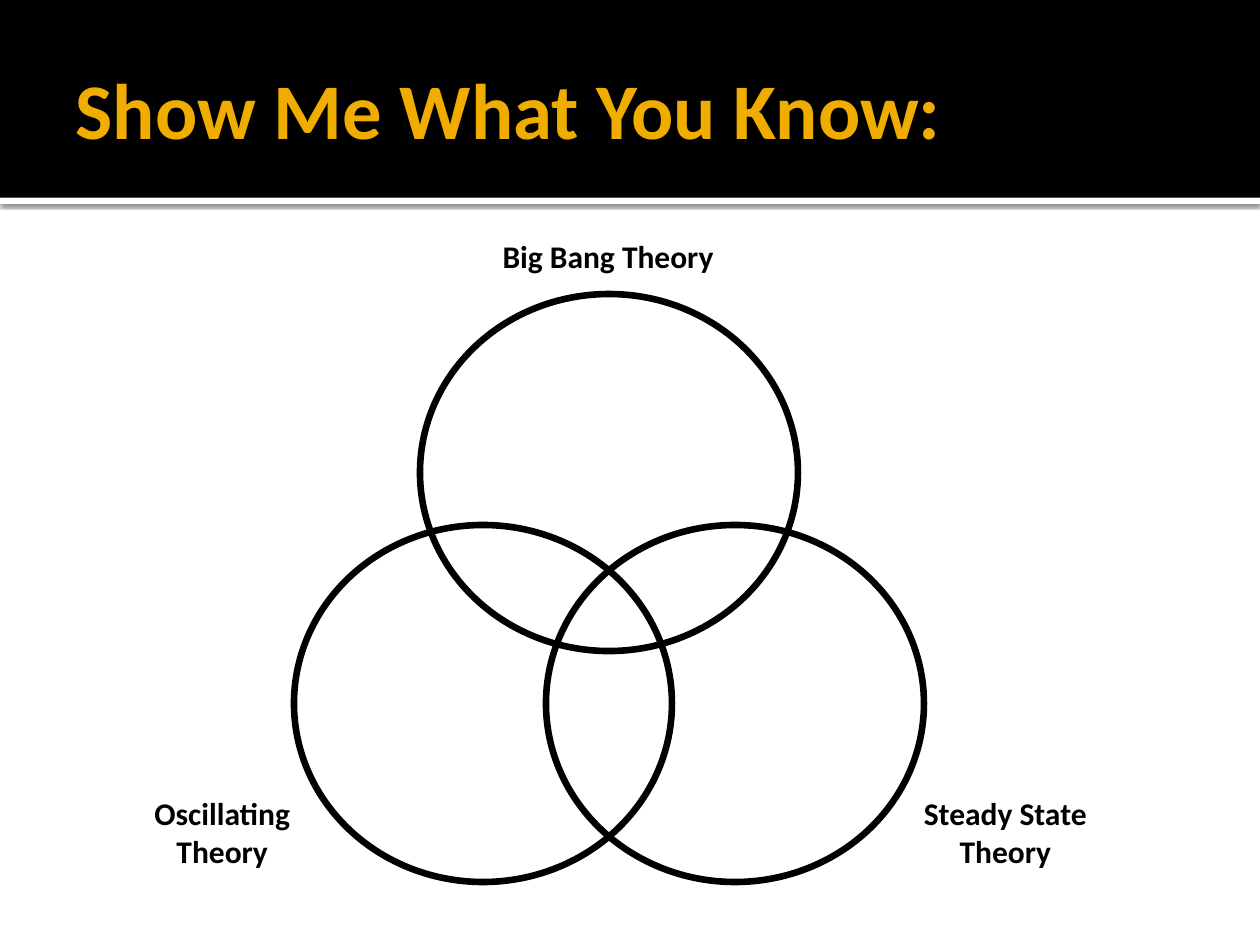
from dataclasses import dataclass

from lxml.etree import SubElement
from pptx import Presentation
from pptx.dml.color import RGBColor as Rgb
from pptx.enum.shapes import MSO_SHAPE as Kind
from pptx.enum.text import MSO_ANCHOR as Anchor, MSO_AUTO_SIZE as Fit, PP_ALIGN as Align
from pptx.oxml.ns import qn
from pptx.shapes.autoshape import Shape
from pptx.slide import Slide
from pptx.util import Pt


@dataclass(frozen=True)
class Theme:
    font: str = "Calibri"
    black: Rgb = Rgb(0, 0, 0)
    white: Rgb = Rgb(255, 255, 255)
    gold: Rgb = Rgb(0xF0, 0xAD, 0)
    head: float = 45
    label: float = 18
    ring: float = 3.78


@dataclass(frozen=True)
class Box:
    left: float
    top: float
    width: float
    height: float

    def place(self) -> tuple[Pt, Pt, Pt, Pt]:
        return Pt(self.left), Pt(self.top), Pt(self.width), Pt(self.height)


@dataclass(frozen=True)
class Theory:
    lines: tuple[str, ...]
    ring: Box
    label: Box


THEME = Theme()
WIDE, HIGH = 720, 540
BAND = 113
RING_W, RING_H = 216, 204
MID, SHIFT = 348, 72
UPPER, LOWER = 168, 300


def ring_box(center: float, top: float) -> Box:
    return Box(center - RING_W / 2, top, RING_W, RING_H)


THEORIES = (
    Theory(("Big Bang Theory",), ring_box(MID, UPPER), Box(276, 132, 143, 29)),
    Theory(("Steady State", "Theory"), ring_box(MID + SHIFT, LOWER), Box(516, 450, 117, 51)),
    Theory(("Oscillating", "Theory"), ring_box(MID - SHIFT, LOWER), Box(78, 450, 98, 51)),
)


def add_band(slide: Slide, box: Box, color: Rgb) -> Shape:
    band = slide.shapes.add_shape(Kind.RECTANGLE, *box.place())
    band.shadow.inherit = False
    band.fill.solid()
    band.fill.fore_color.rgb = color
    band.line.fill.background()
    return band


def cast_shadow(shape: Shape) -> None:
    """Add a soft shadow straight below the shape."""
    effects = shape.element.spPr.find(qn("a:effectLst"))
    outer = SubElement(effects, qn("a:outerShdw"), blurRad=str(Pt(2.5)),
                       dist=str(Pt(0.8)), dir="5400000", algn="tl", rotWithShape="0")
    color = SubElement(outer, qn("a:srgbClr"), val=str(THEME.black))
    SubElement(color, qn("a:alpha"), val="60000")


def style(para, size: float, color: Rgb, align: Align) -> None:
    para.alignment = align
    font = para.font
    font.name, font.size, font.bold = THEME.font, Pt(size), True
    font.color.rgb = color


def set_title(slide: Slide, text: str) -> None:
    title = slide.shapes.title
    title.left, title.top, title.width, title.height = Box(36, 12, 648, 99).place()
    frame = title.text_frame
    frame.text = text
    frame.auto_size = Fit.NONE
    frame.vertical_anchor = Anchor.MIDDLE
    frame.margin_left, frame.margin_right = Pt(7.2), Pt(3.6)
    style(frame.paragraphs[0], THEME.head, THEME.gold, Align.LEFT)
    slide.shapes.element.append(title.element)  # in front of the bands


def add_ring(slide: Slide, box: Box) -> None:
    ring = slide.shapes.add_shape(Kind.OVAL, *box.place())
    ring.shadow.inherit = False
    ring.fill.background()
    ring.line.color.rgb = THEME.black
    ring.line.width = Pt(THEME.ring)


def add_label(slide: Slide, box: Box, lines: tuple[str, ...]) -> None:
    frame = slide.shapes.add_textbox(*box.place()).text_frame
    frame.word_wrap = False
    frame.auto_size = Fit.SHAPE_TO_FIT_TEXT
    frame.text = "\n".join(lines)
    for para in frame.paragraphs:
        style(para, THEME.label, THEME.black, Align.CENTER)


def main() -> None:
    deck = Presentation()
    deck.slide_width, deck.slide_height = Pt(WIDE), Pt(HIGH)
    slide = deck.slides.add_slide(deck.slide_layouts.get_by_name("Title Only"))
    cast_shadow(add_band(slide, Box(0, BAND, WIDE, 3.6), THEME.white))
    add_band(slide, Box(0, 0, WIDE, BAND), THEME.black)
    set_title(slide, "Show Me What You Know:")
    for theory in THEORIES:
        add_ring(slide, theory.ring)
    for theory in THEORIES:
        add_label(slide, theory.label, theory.lines)
    deck.save("out.pptx")


if __name__ == "__main__":
    main()
